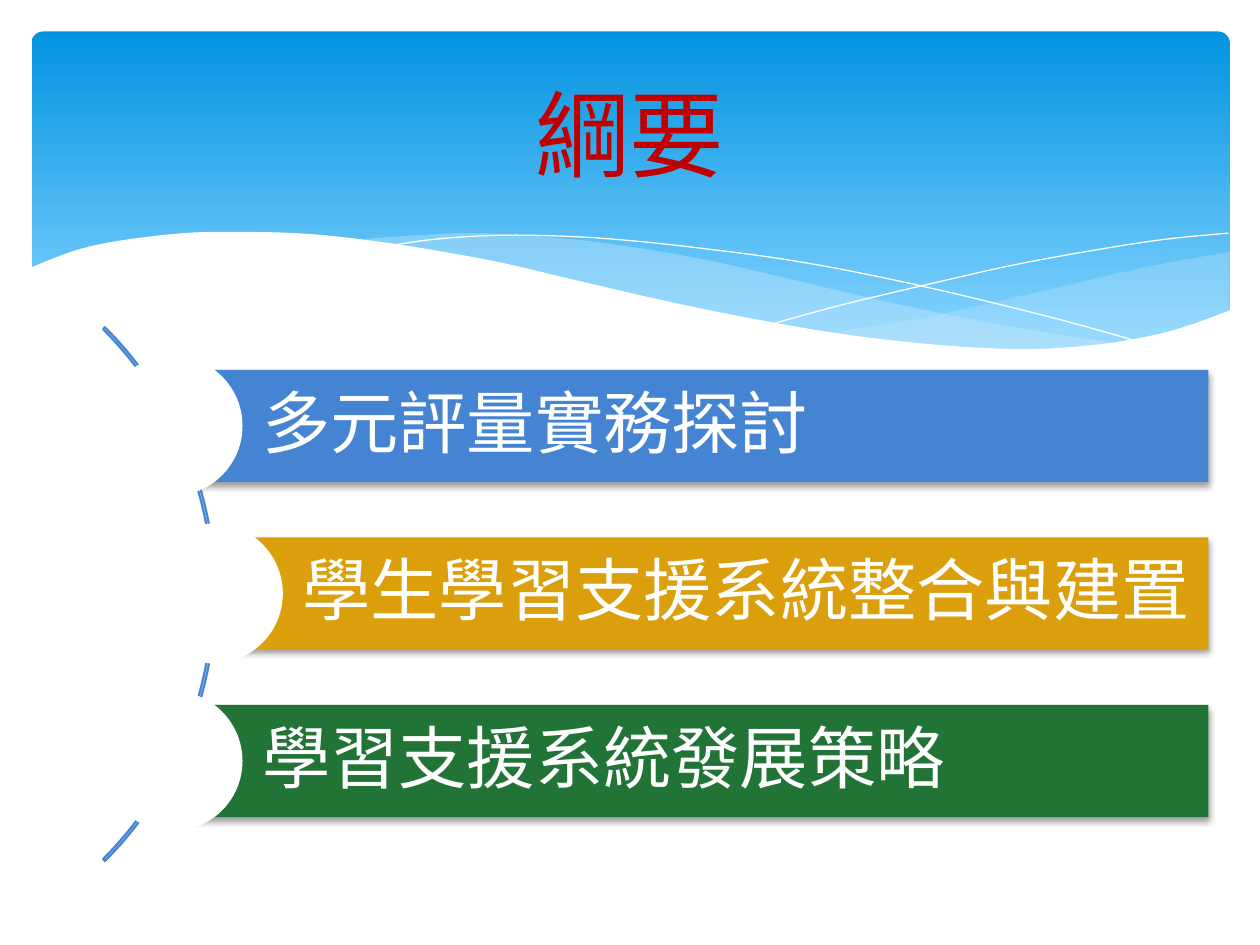
from lxml import etree
from pptx import Presentation
from pptx.dml.color import RGBColor
from pptx.enum.shapes import MSO_SHAPE
from pptx.enum.text import MSO_ANCHOR, PP_ALIGN
from pptx.oxml.ns import qn
from pptx.util import Inches, Pt

ROUNDED, RECT = MSO_SHAPE.ROUNDED_RECTANGLE, MSO_SHAPE.RECTANGLE
OVAL, ARC = MSO_SHAPE.OVAL, MSO_SHAPE.BLOCK_ARC
MIDDLE, LEFT, CENTER = MSO_ANCHOR.MIDDLE, PP_ALIGN.LEFT, PP_ALIGN.CENTER

COLS, ROWS = 10, 7.5
WIDTH, HEIGHT = Inches(10), Inches(7.5)
COLORS = {
    "white": "FFFFFF", "sky": "0293E0", "pale_sky": "83D3FE", "mist": "C6E7FC",
    "red": "C00000", "blue": "4584D3", "gold": "DC9F0C", "green": "217436",
    "black": "000000",
}

BACK_WAVE = [
    (9.76, 2), (9.35, 2.07), (8.91, 2.16), (8.32, 2.3), (7.79, 2.42),
    (7.29, 2.53), (6.61, 2.65), (7.05, 2.71), (7.57, 2.76), (8.03, 2.78),
    (8.54, 2.76), (8.97, 2.7), (9.35, 2.62), (9.76, 2.47),
]
MIDDLE_WAVE = [
    (8.93, 2.73), (8.37, 2.65), (7.75, 2.54), (7.06, 2.4), (6.29, 2.22),
    (5.69, 2.08), (5.14, 1.98), (4.65, 1.91), (4.2, 1.87), (3.8, 1.85),
    (3.44, 1.86), (2.86, 1.91), (3.42, 1.99), (4.04, 2.11), (4.49, 2.22),
    (5.3, 2.4), (6.01, 2.55), (6.65, 2.66), (7.22, 2.74), (7.73, 2.77),
    (8.18, 2.78), (8.57, 2.77), (8.93, 2.73),
]
FALLING_LINE = [
    (3.09, 1.95), (3.44, 1.9), (3.87, 1.87), (4.33, 1.87), (4.89, 1.9),
    (5.56, 1.97), (6.36, 2.08), (7.27, 2.26), (8.31, 2.51), (9.07, 2.72),
]
RISING_LINE = [
    (6.13, 2.57), (6.72, 2.41), (7.48, 2.23), (8.06, 2.1), (8.66, 1.99),
    (9.24, 1.9), (9.75, 1.85),
]
FRONT_WAVE = [
    (0.23, 2.13), (0.59, 1.99), (0.95, 1.91), (1.46, 1.85), (1.93, 1.84),
    (2.5, 1.86), (3.16, 1.94), (3.91, 2.07), (4.47, 2.2), (5.29, 2.39),
    (6.03, 2.54), (6.68, 2.65), (7.26, 2.72), (7.78, 2.76), (8.23, 2.77),
    (8.75, 2.73), (9.2, 2.65), (9.5, 2.56), (9.77, 2.46),
]
TOPICS = [
    ("多元評量實務探討", "blue", 1.37),
    ("學生學習支援系統整合與建置", "gold", 1.69),
    ("學習支援系統發展策略", "green", 1.37),
]


def rgb(color):
    return RGBColor.from_string(COLORS[color])


def col(count):
    return round(WIDTH * count / COLS)


def row(count):
    return round(HEIGHT * count / ROWS)


def smooth(knots, steps=6):
    """Return points on a Catmull-Rom curve through the knots."""
    padded = [knots[0], *knots, knots[-1]]
    curve = [knots[0]]
    for a, b, c, d in zip(padded, padded[1:], padded[2:], padded[3:]):
        for step in range(1, steps + 1):
            t = step / steps
            curve.append(tuple(
                (2 * q + (r - p) * t + (2 * p - 5 * q + 4 * r - s) * t ** 2
                 + (3 * q - p - 3 * r + s) * t ** 3) / 2
                for p, q, r, s in zip(a, b, c, d)))
    return curve


def write(frame, text, *, size, color, font, align=LEFT, spacing=1.0,
          insets=(0.1, 0.05, 0.1, 0.05)):
    frame.word_wrap = True
    frame.vertical_anchor = MIDDLE
    frame.margin_left, frame.margin_right = col(insets[0]), col(insets[2])
    frame.margin_top, frame.margin_bottom = row(insets[1]), row(insets[3])
    paragraph = frame.paragraphs[0]
    paragraph.alignment, paragraph.line_spacing = align, spacing
    run = paragraph.add_run()
    run.text = text
    run.font.size, run.font.name = Pt(size), font
    run.font.color.rgb = rgb(color)
    east_asian = etree.SubElement(run.font._element, qn("a:ea"))
    east_asian.set("typeface", font)


class Deck:
    title_font, body_font = "Noto Sans CJK SC", "Calibri"

    def __init__(self):
        self.file = Presentation()
        self.file.slide_width, self.file.slide_height = WIDTH, HEIGHT
        self.slide = self.file.slides.add_slide(self.file.slide_layouts[6])

    def paint(self, shape, fill=None, line=None, weight=0, alpha=None):
        shape.shadow.inherit = False
        if fill:
            shape.fill.solid()
            shape.fill.fore_color.rgb = rgb(fill)
        else:
            shape.fill.background()
        if alpha is not None:
            hue = shape._element.spPr.find(qn("a:solidFill"))[0]
            etree.SubElement(hue, qn("a:alpha")).set("val", str(alpha * 1000))
        if line:
            shape.line.color.rgb = rgb(line)
            shape.line.width = Pt(weight)
        else:
            shape.line.fill.background()

    def shape(self, kind, left, top, width, height, adjust=(), **paint):
        shape = self.slide.shapes.add_shape(
            kind, col(left), row(top), col(width), row(height))
        for index, value in enumerate(adjust):
            shape.adjustments[index] = value
        self.paint(shape, **paint)
        return shape

    def curve(self, knots, tail=(), closed=True, **paint):
        """Draw a smooth curve, followed by the straight corners in tail."""
        points = [(col(x), row(y)) for x, y in [*smooth(knots), *tail]]
        builder = self.slide.shapes.build_freeform(*points[0])
        builder.add_line_segments(points[1:], close=closed)
        self.paint(builder.convert_to_shape(), **paint)

    def sky_panel(self):
        panel = self.shape(ROUNDED, 0.25, 0.25, 9.51, 2.7, adjust=[0.034])
        panel.fill.gradient()
        panel.fill.gradient_angle = 270
        stops = zip(panel.fill.gradient_stops, ("sky", "pale_sky"), (0, 0.9))
        for stop, color, position in stops:
            stop.color.rgb, stop.position = rgb(color), position

    def title(self, text):
        box = self.slide.shapes.add_textbox(
            col(0.5), row(0.37), col(9), row(1.37))
        write(box.text_frame, text, size=54, color="red",
              font=self.title_font, align=CENTER)

    def drop_shadow(self, shape):
        effects = shape._element.spPr.find(qn("a:effectLst"))
        shadow = etree.SubElement(
            effects, qn("a:outerShdw"), blurRad=str(Pt(4)), dist=str(Pt(2)),
            dir="5400000", rotWithShape="0")
        hue = etree.SubElement(shadow, qn("a:srgbClr"), val=COLORS["black"])
        etree.SubElement(hue, qn("a:alpha"), val="38000")

    def topic(self, text, color, left, middle):
        right, height, disc = 9.59, 0.89, 1.11
        bar = self.shape(RECT, left, middle - height / 2, right - left, height,
                         fill=color)
        self.drop_shadow(bar)
        write(bar.text_frame, text, size=39, color="white", font=self.body_font,
              spacing=0.9, insets=(0.71, 0.11, 0.11, 0.11))
        self.shape(OVAL, left - disc / 2, middle - disc / 2, disc, disc,
                   fill="white")


def main():
    deck = Deck()
    deck.sky_panel()
    deck.curve(BACK_WAVE, fill="mist", alpha=29)
    deck.curve(MIDDLE_WAVE, fill="mist", alpha=40)
    for strand in (FALLING_LINE, RISING_LINE):
        deck.curve(strand, closed=False, line="white")
    deck.curve(FRONT_WAVE, tail=[(9.77, 3.29), (0.23, 3.29)], fill="white")
    deck.title("綱要")
    deck.shape(ARC, -4.28, 1.72, 5.99, 5.99, adjust=[189, 27, 0.0036],
               line="blue", weight=1.25)
    first_middle, pitch = 3.38, 1.33
    for index, (text, color, left) in enumerate(TOPICS):
        deck.topic(text, color, left, first_middle + index * pitch)
    deck.file.save("out.pptx")


if __name__ == "__main__":
    main()
